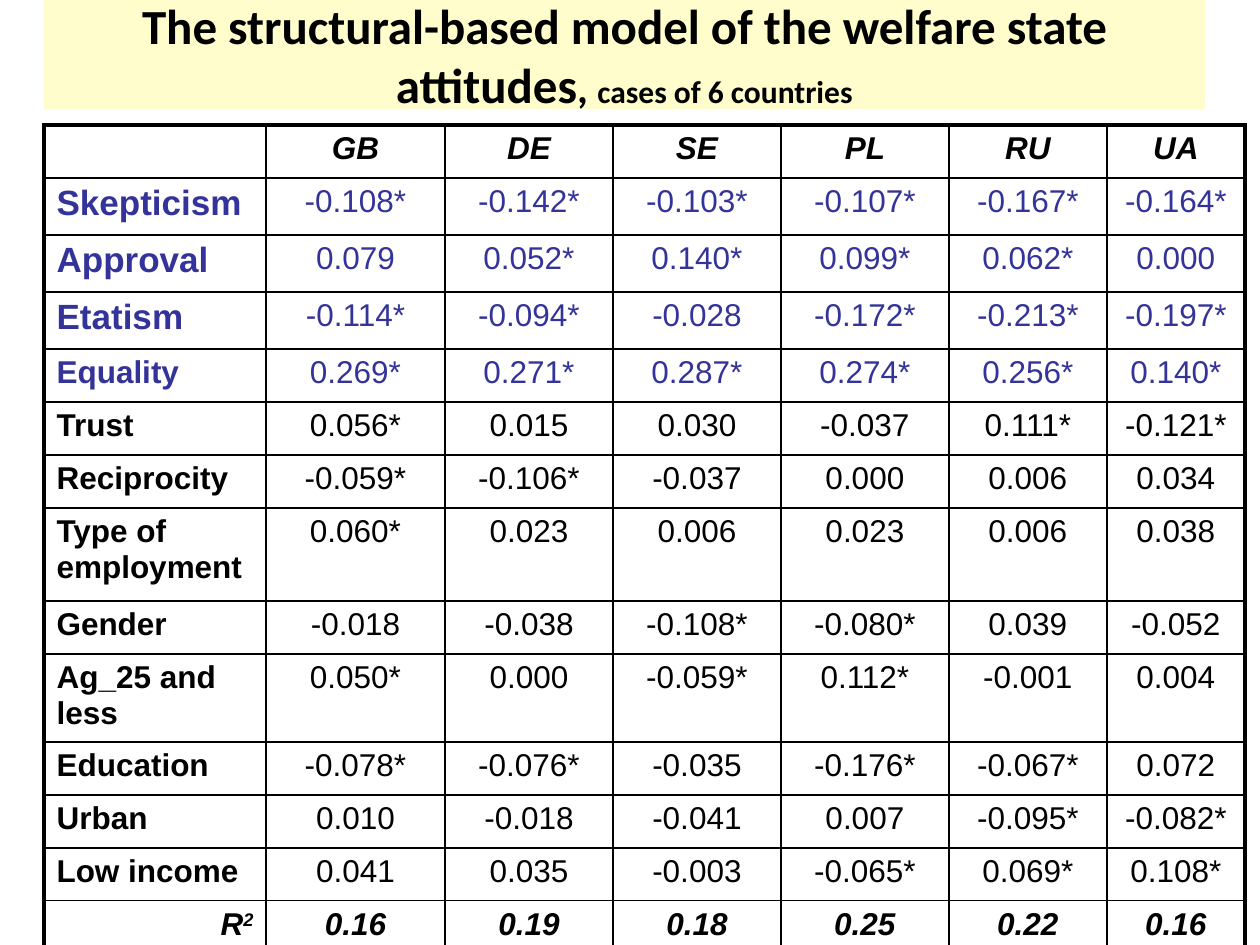
from dataclasses import dataclass

from lxml.etree import SubElement
from pptx import Presentation
from pptx.dml.color import RGBColor
from pptx.enum.shapes import MSO_SHAPE
from pptx.enum.text import MSO_ANCHOR, PP_ALIGN
from pptx.oxml.ns import qn
from pptx.util import Emu, Pt


@dataclass(frozen=True)
class Theme:
    ink: str = "000000"
    accent: str = "333399"
    banner: str = "FEFDCB"
    title_font: str = "Calibri"
    table_font: str = "Arial"
    title: int = 28
    comma: int = 24
    body: int = 18
    label: int = 20
    thin: float = 1
    thick: float = 2.25


class Deck:
    """Holds the theme and current slide and draws each kind of element."""

    def __init__(self, prs, theme):
        self.theme = theme
        self.s = prs.slides.add_slide(prs.slide_layouts[6])

    def px(self, n):
        return Emu(round(n * 914400 / 126))

    def run(self, p, text, font, size, color, bold=False, italic=False):
        r = p.add_run()
        r.text = text
        f = r.font
        f.name, f.size, f.bold, f.italic = font, Pt(size), bold, italic
        f.color.rgb = RGBColor.from_string(color)
        return r

    def banner(self, x, y, w, h, parts):
        t = self.theme
        sp = self.s.shapes.add_shape(MSO_SHAPE.RECTANGLE, *map(self.px, (x, y, w, h)))
        sp.shadow.inherit = False
        sp.fill.solid()
        sp.fill.fore_color.rgb = RGBColor.from_string(t.banner)
        sp.line.fill.background()
        tf = sp.text_frame
        tf.word_wrap = True
        tf.vertical_anchor = MSO_ANCHOR.MIDDLE
        p = tf.paragraphs[0]
        p.alignment = PP_ALIGN.CENTER
        for text, size in parts:
            self.run(p, text, t.title_font, size, t.ink, bold=True)

    def borders(self, cell, widths):
        tc_pr = cell._tc.get_or_add_tcPr()
        for side, width in widths.items():
            ln = SubElement(tc_pr, qn(f"a:ln{side}"), w=str(Pt(width)))
            fill = SubElement(ln, qn("a:solidFill"))
            SubElement(fill, qn("a:srgbClr"), val=self.theme.ink)

    def cell_text(self, cell, parts, align, **style):
        p = cell.text_frame.paragraphs[0]
        p.alignment = align
        before = SubElement(p._p.get_or_add_pPr(), qn("a:spcBef"))
        SubElement(before, qn("a:spcPct"), val="20000")
        runs = [self.run(p, text, self.theme.table_font, **style) for text in parts]
        for r in runs[1:]:
            r.font._element.set("baseline", "30000")

    def table(self, x, y, widths, heights, rows, accent_rows, large_rows):
        t = self.theme
        last_row, last_col = len(heights) - 1, len(widths) - 1
        box = map(self.px, (x, y, sum(widths), sum(heights)))
        tbl = self.s.shapes.add_table(len(heights), len(widths), *box).table
        tbl.first_row = tbl.horz_banding = False
        for col, width in zip(tbl.columns, widths):
            col.width = self.px(width)
        for row, height in zip(tbl.rows, heights):
            row.height = self.px(height)
        for i, row in enumerate(rows):
            edge_row = i in (0, last_row)
            for j, text in enumerate(row):
                cell = tbl.cell(i, j)
                outer = {"L": j == 0, "R": j == last_col, "T": i == 0, "B": i == last_row}
                self.borders(cell, {k: t.thick if v else t.thin for k, v in outer.items()})
                cell.fill.background()
                if not text:
                    continue
                if j:
                    align = PP_ALIGN.CENTER
                else:
                    align = PP_ALIGN.RIGHT if edge_row else PP_ALIGN.LEFT
                self.cell_text(
                    cell,
                    text if isinstance(text, tuple) else (text,),
                    align,
                    size=t.label if j == 0 and i in large_rows else t.body,
                    color=t.accent if i in accent_rows else t.ink,
                    bold=edge_row or j == 0,
                    italic=edge_row,
                )


COUNTRIES = ["GB", "DE", "SE", "PL", "RU", "UA"]
COEFFICIENTS = [
    ("Skepticism", "-0.108* -0.142* -0.103* -0.107* -0.167* -0.164*"),
    ("Approval", "0.079 0.052* 0.140* 0.099* 0.062* 0.000"),
    ("Etatism", "-0.114* -0.094* -0.028 -0.172* -0.213* -0.197*"),
    ("Equality", "0.269* 0.271* 0.287* 0.274* 0.256* 0.140*"),
    ("Trust", "0.056* 0.015 0.030 -0.037 0.111* -0.121*"),
    ("Reciprocity", "-0.059* -0.106* -0.037 0.000 0.006 0.034"),
    ("Type of employment", "0.060* 0.023 0.006 0.023 0.006 0.038"),
    ("Gender", "-0.018 -0.038 -0.108* -0.080* 0.039 -0.052"),
    ("Ag_25 and less", "0.050* 0.000 -0.059* 0.112* -0.001 0.004"),
    ("Education", "-0.078* -0.076* -0.035 -0.176* -0.067* 0.072"),
    ("Urban", "0.010 -0.018 -0.041 0.007 -0.095* -0.082*"),
    ("Low income", "0.041 0.035 -0.003 -0.065* 0.069* 0.108*"),
    (("R", "2"), "0.16 0.19 0.18 0.25 0.22 0.16"),
]


def main():
    prs = Presentation()
    theme = Theme()
    deck = Deck(prs, theme)
    prs.slide_width, prs.slide_height = deck.px(1260), deck.px(945)
    deck.banner(44, 0, 1161, 109, [
        ("The structural-based model of the welfare state attitudes", theme.title),
        (", ", theme.comma),
        ("cases of 6 countries", theme.body),
    ])
    deck.table(
        44, 125,
        widths=[222, 179, 168, 168, 168, 158, 138],
        heights=[53] + [57] * 3 + [53] * 3 + [93, 53, 88] + [53] * 4,
        rows=[["", *COUNTRIES]] + [[name, *values.split()] for name, values in COEFFICIENTS],
        accent_rows=range(1, 5),
        large_rows=range(1, 4),
    )
    prs.save("out.pptx")


if __name__ == "__main__":
    main()
